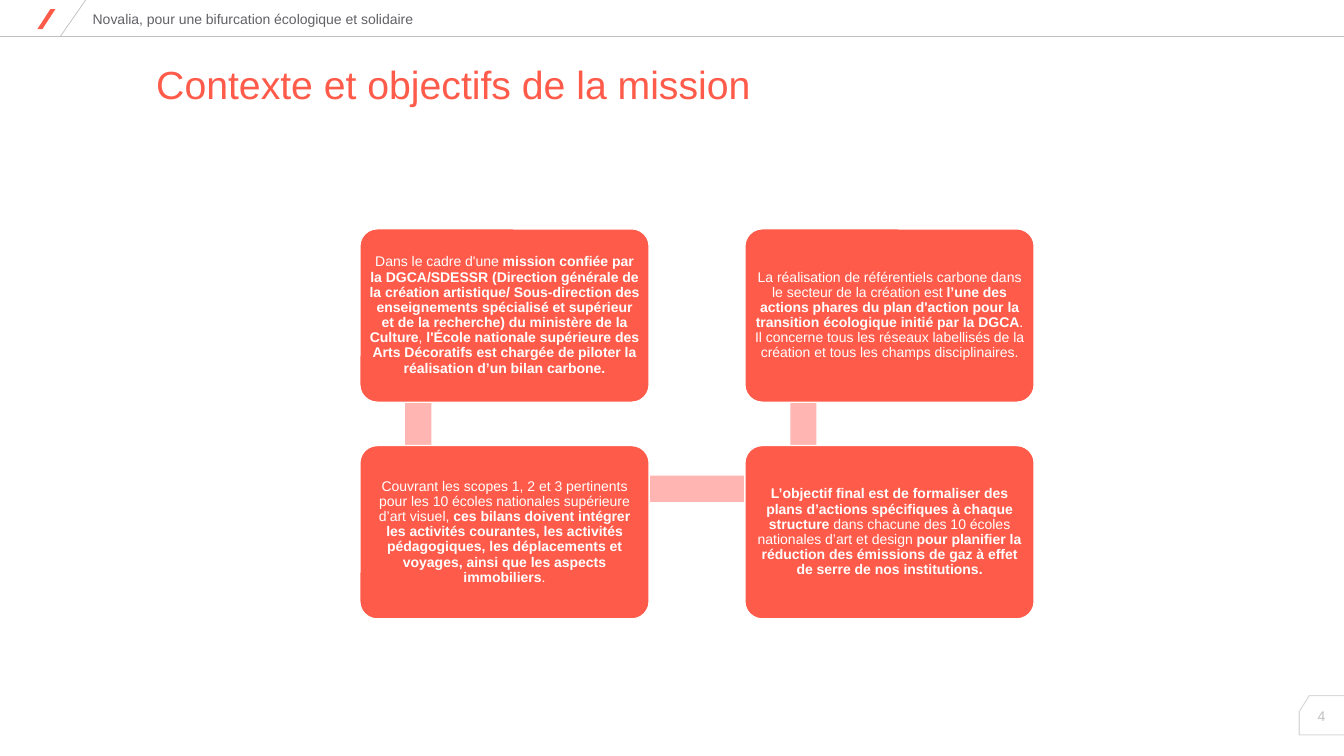
import dataclasses

import lxml.etree
import pptx
import pptx.dml.color
import pptx.enum.shapes
import pptx.enum.text
import pptx.oxml.ns
import pptx.util

SHAPE = pptx.enum.shapes.MSO_SHAPE
ALIGN = pptx.enum.text.PP_ALIGN
ANCHOR = pptx.enum.text.MSO_ANCHOR


@dataclasses.dataclass(frozen=True)
class Theme:
    font: str = "Arial"
    title_size: int = 28
    text_size: int = 10
    coral: str = "FF5B4A"
    pink: str = "FFB5B2"
    white: str = "FFFFFF"
    grey: str = "616166"
    rule: str = "BFBFBF"
    tab: str = "D9D9D9"


class SlideBuilder:
    """Places elements on a grid of 160 columns by 90 rows."""

    def __init__(self, deck, theme):
        self.theme = theme
        self.column = deck.slide_width / 160
        self.row = deck.slide_height / 90
        self.page = deck.slides.add_slide(deck.slide_layouts[5])

    def x(self, columns):
        return round(columns * self.column)

    def y(self, rows):
        return round(rows * self.row)

    def area(self, left, top, width, height):
        return self.x(left), self.y(top), self.x(width), self.y(height)

    def paint(self, shape, fill, line=None, width=1):
        shape.shadow.inherit = False
        shape.fill.solid()
        shape.fill.fore_color.rgb = pptx.dml.color.RGBColor.from_string(fill)
        if line:
            shape.line.color.rgb = pptx.dml.color.RGBColor.from_string(line)
            shape.line.width = pptx.util.Pt(width)
        else:
            shape.line.fill.background()

    def set_text(self, box, spans, color, size, align=ALIGN.LEFT, anchor=ANCHOR.MIDDLE,
                 margins=(0, 0, 0, 0), spacing=1.0):
        frame = box.text_frame
        left, top, right, bottom = (pptx.util.Inches(margin) for margin in margins)
        frame_format = {
            "word_wrap": True, "auto_size": pptx.enum.text.MSO_AUTO_SIZE.NONE,
            "vertical_anchor": anchor, "margin_left": left, "margin_top": top,
            "margin_right": right, "margin_bottom": bottom,
        }
        for name, value in frame_format.items():
            setattr(frame, name, value)
        para = frame.paragraphs[0]
        para.alignment = align
        para.line_spacing = spacing
        for text, bold in spans:
            span = para.add_run()
            span.text = text
            font_format = {"name": self.theme.font, "size": pptx.util.Pt(size), "bold": bold}
            for name, value in font_format.items():
                setattr(span.font, name, value)
            span.font.color.rgb = pptx.dml.color.RGBColor.from_string(color)

    def title(self, text, *place):
        box = self.page.shapes.title
        for name, value in zip(("left", "top", "width", "height"), self.area(*place)):
            setattr(box, name, value)
        self.set_text(box, [(text, False)], self.theme.coral, self.theme.title_size,
                      anchor=ANCHOR.TOP)

    def label(self, text, place, color, **style):
        box = self.page.shapes.add_textbox(*self.area(*place))
        self.set_text(box, [(text, False)], color, self.theme.text_size, **style)

    def line(self, start, end):
        connector = self.page.shapes.add_connector(
            pptx.enum.shapes.MSO_CONNECTOR.STRAIGHT,
            self.x(start[0]), self.y(start[1]), self.x(end[0]), self.y(end[1]))
        connector.line.color.rgb = pptx.dml.color.RGBColor.from_string(self.theme.rule)
        connector.line.width = pptx.util.Pt(0.5)
        lxml.etree.SubElement(connector._element.spPr, pptx.oxml.ns.qn("a:effectLst"))

    def outline(self, points, fill, line=None, width=1):
        corners = [(self.x(across), self.y(down)) for across, down in points]
        builder = self.page.shapes.build_freeform(*corners[0])
        builder.add_line_segments(corners[1:], close=True)
        self.paint(builder.convert_to_shape(), fill, line, width)

    def bar(self, *place):
        box = self.page.shapes.add_shape(SHAPE.RECTANGLE, *self.area(*place))
        self.paint(box, self.theme.pink)

    def card(self, spans, *place):
        box = self.page.shapes.add_shape(SHAPE.ROUNDED_RECTANGLE, *self.area(*place))
        box.adjustments[0] = 0.1
        self.paint(box, self.theme.coral, self.theme.white)
        self.set_text(box, spans, self.theme.white, self.theme.text_size, ALIGN.CENTER,
                      margins=(0.04,) * 4, spacing=0.9)


# Card texts by (column, row), each span with its bold flag
CARDS = {
    (0, 0): [
        ("Dans le cadre d'une ", False),
        ("mission confiée par la DGCA/SDESSR (Direction générale de la création artistique/ "
         "Sous-direction des enseignements spécialisé et supérieur et de la recherche) "
         "du ministère de la Culture", True),
        (", ", False),
        ("l'École nationale supérieure des Arts Décoratifs est chargée de piloter "
         "la réalisation d’un bilan carbone.", True),
    ],
    (0, 1): [
        ("Couvrant les scopes 1, 2 et 3 pertinents pour les 10 écoles nationales "
         "supérieure d’art visuel, ", False),
        ("ces bilans doivent intégrer les activités courantes, les activités pédagogiques, "
         "les déplacements et voyages, ainsi que les aspects immobiliers", True),
        (".", False),
    ],
    (1, 1): [
        ("L’objectif final est de formaliser des plans d’actions spécifiques "
         "à chaque structure ", True),
        ("dans chacune des 10 écoles nationales d’art et design ", False),
        ("pour planifier la réduction des émissions de gaz à effet de serre "
         "de nos institutions.", True),
    ],
    (1, 0): [
        ("La réalisation de référentiels carbone dans le secteur de la création est ", False),
        ("l’une des actions phares du plan d'action pour la transition écologique "
         "initié par la DGCA", True),
        (". Il concerne tous les réseaux labellisés de la création "
         "et tous les champs disciplinaires.", False),
    ],
}
CARD_LEFT, CARD_TOP = 42.84, 27.24
CARD_WIDTH, CARD_HEIGHT = 34.44, 20.64
PITCH_ACROSS, PITCH_DOWN = 45.84, 25.8
BAR = 3.12


def main():
    deck = pptx.Presentation()
    deck.slide_width = pptx.util.Inches(13.33)
    deck.slide_height = pptx.util.Inches(7.5)
    theme = Theme()
    slide = SlideBuilder(deck, theme)

    # Header band
    slide.line((0, 4.32), (160, 4.32))
    slide.outline([(5.04, 3.48), (4.44, 3.48), (6, 1.08), (6.6, 1.08)], theme.coral)
    slide.line((10.2, 0), (7.2, 4.32))
    slide.label("Novalia, pour une bifurcation écologique et solidaire",
                (11.04, 0.6, 141.72, 2.88), theme.grey, margins=(0, 0.04, 0, 0))

    # Title
    slide.title("Contexte et objectifs de la mission", 18.6, 7.2, 122.88, 5.64)

    # Page number tab
    slide.outline([(155.88, 82.8), (160.32, 82.8), (160.32, 87.48), (154.68, 87.48),
                   (154.68, 84.72)], theme.white, theme.tab, 0.75)
    slide.label("4", (154.68, 83.76, 5.28, 2.88), theme.rule, align=ALIGN.CENTER)

    # Links between the cards
    for column in range(2):
        slide.bar(CARD_LEFT + column * PITCH_ACROSS + 5.4, CARD_TOP + 5.16, BAR, PITCH_DOWN)
    slide.bar(CARD_LEFT + 7.08, CARD_TOP + PITCH_DOWN + 3.6, PITCH_ACROSS, BAR)

    # Cards
    for (column, row), spans in CARDS.items():
        slide.card(spans, CARD_LEFT + column * PITCH_ACROSS, CARD_TOP + row * PITCH_DOWN,
                   CARD_WIDTH, CARD_HEIGHT)

    deck.save("out.pptx")


if __name__ == "__main__":
    main()
